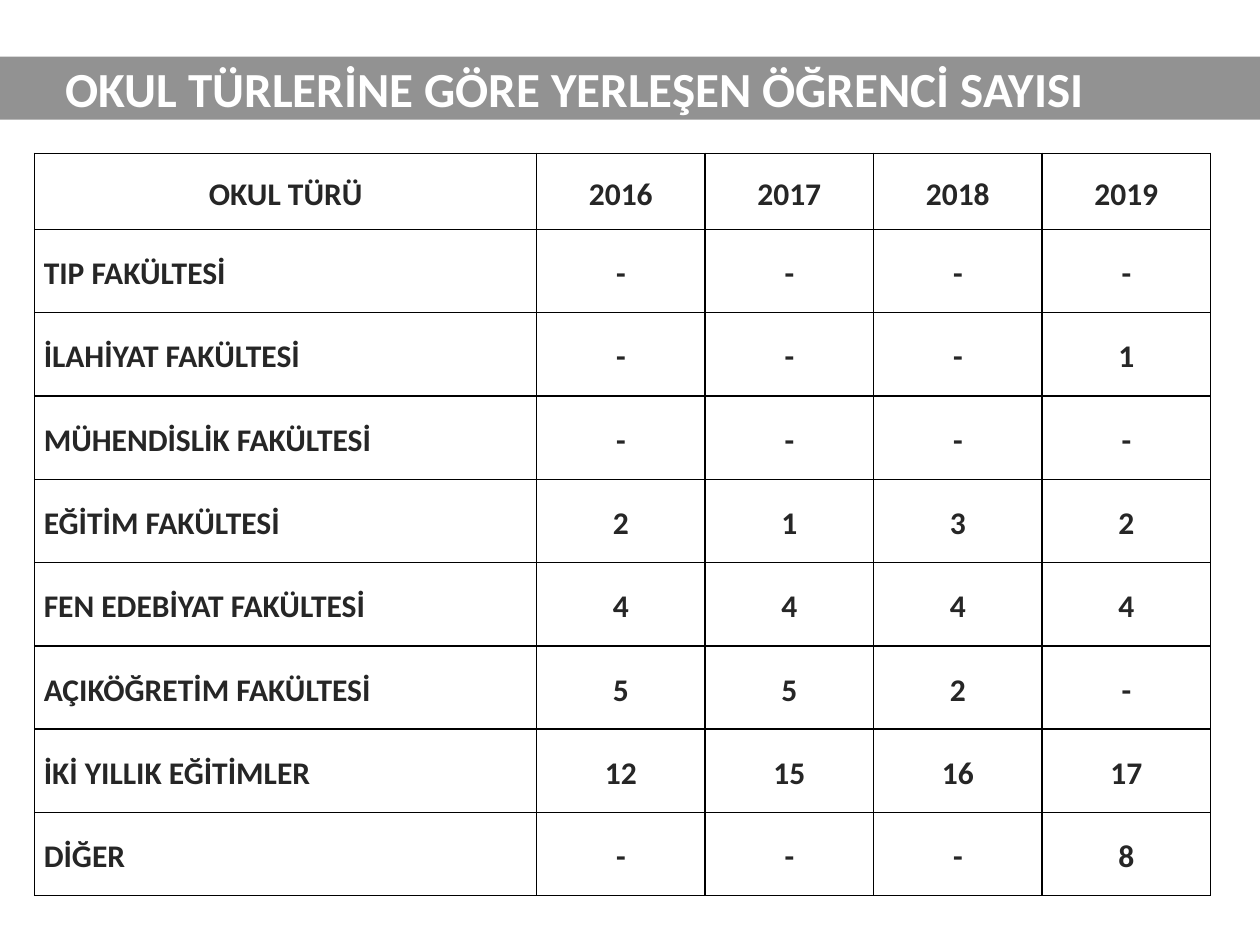
from dataclasses import dataclass

from lxml.etree import SubElement
from pptx import Presentation
from pptx.dml.color import RGBColor
from pptx.enum.text import MSO_ANCHOR, MSO_AUTO_SIZE, PP_ALIGN
from pptx.oxml.ns import qn
from pptx.util import Pt


@dataclass(frozen=True)
class Theme:
    font: str = "Calibri"
    title_size: int = 28
    table_size: int = 18
    band: str = "929292"
    title_text: str = "FFFFFF"
    table_text: str = "262626"
    cell: str = "FFFFFF"
    border: str = "000000"


theme = Theme()


def write_text(text_frame, text, *, size, color, align=PP_ALIGN.LEFT, line_spacing=1.0):
    paragraph = text_frame.paragraphs[0]
    paragraph.alignment = align
    paragraph.line_spacing = line_spacing
    run = paragraph.add_run()
    run.text = text
    run.font.name = theme.font
    run.font.size = Pt(size)
    run.font.bold = True
    run.font.color.rgb = RGBColor.from_string(color)


def add_borders(cell, color, width):
    properties = cell._tc.get_or_add_tcPr()
    for position, side in enumerate(("lnL", "lnR", "lnT", "lnB")):
        line = SubElement(properties, qn(f"a:{side}"), w=str(Pt(width)))
        properties.insert(position, line)  # borders come before the fill
        fill = SubElement(line, qn("a:solidFill"))
        SubElement(fill, qn("a:srgbClr"), val=color)


presentation = Presentation()
presentation.slide_width = Pt(720)
presentation.slide_height = Pt(540)
slide = presentation.slides.add_slide(presentation.slide_layouts[5])

# Title band across the slide
title = slide.shapes.title
title.left, title.top, title.width, title.height = Pt(0), Pt(32.4), Pt(720), Pt(36)
title.fill.solid()
title.fill.fore_color.rgb = RGBColor.from_string(theme.band)
title_frame = title.text_frame
title_frame.auto_size = MSO_AUTO_SIZE.NONE
title_frame.word_wrap = True
title_frame.vertical_anchor = MSO_ANCHOR.MIDDLE
title_frame.margin_left = Pt(37.5)
write_text(title_frame, "OKUL TÜRLERİNE GÖRE YERLEŞEN ÖĞRENCİ SAYISI",
           size=theme.title_size, color=theme.title_text)

# Students placed, by school type and year
rows = [
    ("OKUL TÜRÜ", "2016", "2017", "2018", "2019"),
    ("TIP FAKÜLTESİ", "-", "-", "-", "-"),
    ("İLAHİYAT FAKÜLTESİ", "-", "-", "-", "1"),
    ("MÜHENDİSLİK FAKÜLTESİ", "-", "-", "-", "-"),
    ("EĞİTİM FAKÜLTESİ", "2", "1", "3", "2"),
    ("FEN EDEBİYAT FAKÜLTESİ", "4", "4", "4", "4"),
    ("AÇIKÖĞRETİM FAKÜLTESİ", "5", "5", "2", "-"),
    ("İKİ YILLIK EĞİTİMLER", "12", "15", "16", "17"),
    ("DİĞER", "-", "-", "-", "8"),
]
column_widths = [286.8] + [96.3] * 4
row_heights = [43.5] + [47.6] * 8
table = slide.shapes.add_table(
    len(rows), len(column_widths), Pt(19.8), Pt(87.6),
    Pt(sum(column_widths)), Pt(sum(row_heights))).table
for column, width in zip(table.columns, column_widths):
    column.width = Pt(width)
for row, height in zip(table.rows, row_heights):
    row.height = Pt(height)

for row_index, values in enumerate(rows):
    for column_index, value in enumerate(values):
        cell = table.cell(row_index, column_index)
        cell.fill.solid()
        cell.fill.fore_color.rgb = RGBColor.from_string(theme.cell)
        cell.vertical_anchor = MSO_ANCHOR.MIDDLE
        cell.margin_left = cell.margin_right = Pt(5.2)
        cell.margin_top = cell.margin_bottom = Pt(0)
        add_borders(cell, theme.border, 1)
        is_school_name = row_index > 0 and column_index == 0
        write_text(cell.text_frame, value, size=theme.table_size, color=theme.table_text,
                   align=PP_ALIGN.LEFT if is_school_name else PP_ALIGN.CENTER,
                   line_spacing=1.15)

presentation.save("out.pptx")
